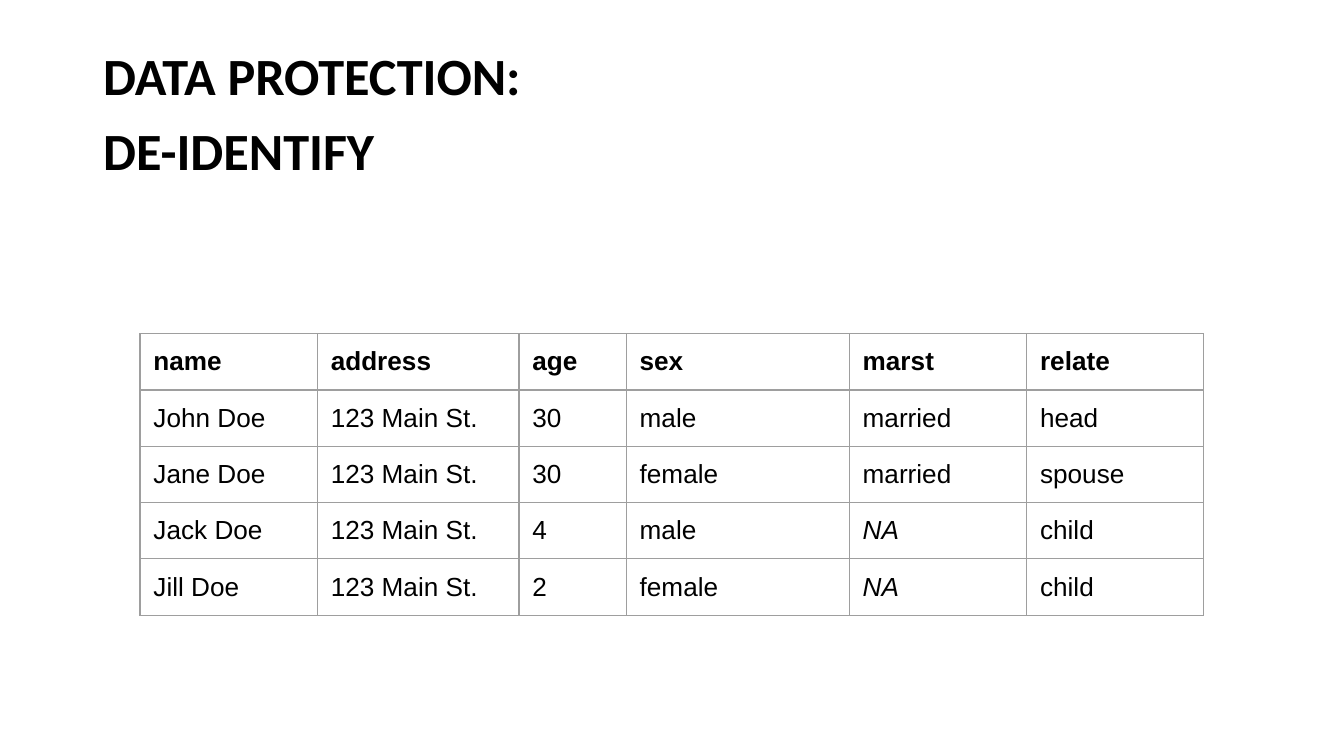
"""Build a slide on de-identifying a household data table."""
from typing import NamedTuple

import lxml.etree
import pptx
import pptx.dml.color
import pptx.oxml.ns
import pptx.util

Pt = pptx.util.Pt
BLACK = pptx.dml.color.RGBColor(0x00, 0x00, 0x00)
GREY = pptx.dml.color.RGBColor(0x9E, 0x9E, 0x9E)
WIDTHS = (95, 108, 57.5, 119.5, 95, 95)
HEIGHT = 30
PAD = 7.2


class Style(NamedTuple):
    font: str
    size: float
    bold: bool = False
    slant: bool = False


class Person(NamedTuple):
    name: str
    address: str
    age: str
    sex: str
    marst: str
    relate: str


TITLE = Style("Calibri", 28, bold=True)
HEAD = Style("Arial", 14, bold=True)
BODY = Style("Arial", 14)
MISSING = Style("Arial", 14, slant=True)
STREET = "123 Main St."
PEOPLE = (
    Person("John Doe", STREET, "30", "male", "married", "head"),
    Person("Jane Doe", STREET, "30", "female", "married", "spouse"),
    Person("Jack Doe", STREET, "4", "male", "NA", "child"),
    Person("Jill Doe", STREET, "2", "female", "NA", "child"),
)


def add_text(para, text: str, style: Style) -> None:
    run = para.add_run()
    run.text = text
    font = run.font
    font.name, font.size = style.font, Pt(style.size)
    font.bold, font.italic = style.bold, style.slant
    font.color.rgb = BLACK


def add_title(slide, lines: tuple[str, ...]) -> None:
    box = slide.shapes.add_textbox(Pt(48.25), Pt(19.5), Pt(603.5), Pt(101.5))
    frame = box.text_frame
    frame.word_wrap = True
    for index, line in enumerate(lines):
        para = frame.add_paragraph() if index else frame.paragraphs[0]
        if index:
            para.space_before = Pt(6.4)
        add_text(para, line, TITLE)


def add_edges(cell) -> None:
    qn = pptx.oxml.ns.qn
    props = cell._tc.get_or_add_tcPr()
    for side in ("lnL", "lnR", "lnT", "lnB"):
        edge = lxml.etree.SubElement(props, qn(f"a:{side}"), w=str(Pt(0.75)))
        fill = lxml.etree.SubElement(edge, qn("a:solidFill"))
        lxml.etree.SubElement(fill, qn("a:srgbClr"), val=str(GREY))


def fill_cell(cell, text: str, style: Style) -> None:
    cell.margin_left = cell.margin_right = Pt(PAD)
    cell.margin_top = cell.margin_bottom = Pt(PAD)
    add_edges(cell)
    cell.fill.background()
    add_text(cell.text_frame.paragraphs[0], text, style)


def add_grid(slide, people: tuple[Person, ...]) -> None:
    rows = (Person._fields, *people)
    frame = slide.shapes.add_table(
        len(rows), len(WIDTHS), Pt(75), Pt(178.75),
        Pt(sum(WIDTHS)), Pt(HEIGHT * len(rows)))
    table = frame.table
    table.first_row = table.horz_banding = False
    for column, width in zip(table.columns, WIDTHS):
        column.width = Pt(width)
    for index, row in enumerate(rows):
        table.rows[index].height = Pt(HEIGHT)
        for cell, text in zip(table.rows[index].cells, row):
            style = MISSING if text == "NA" else BODY
            fill_cell(cell, text, style if index else HEAD)


def main() -> None:
    deck = pptx.Presentation()
    deck.slide_width, deck.slide_height = Pt(720), Pt(405)
    slide = deck.slides.add_slide(deck.slide_layouts[6])
    add_grid(slide, PEOPLE)
    add_title(slide, ("DATA PROTECTION:", "DE-IDENTIFY"))
    deck.save("out.pptx")


if __name__ == "__main__":
    main()
